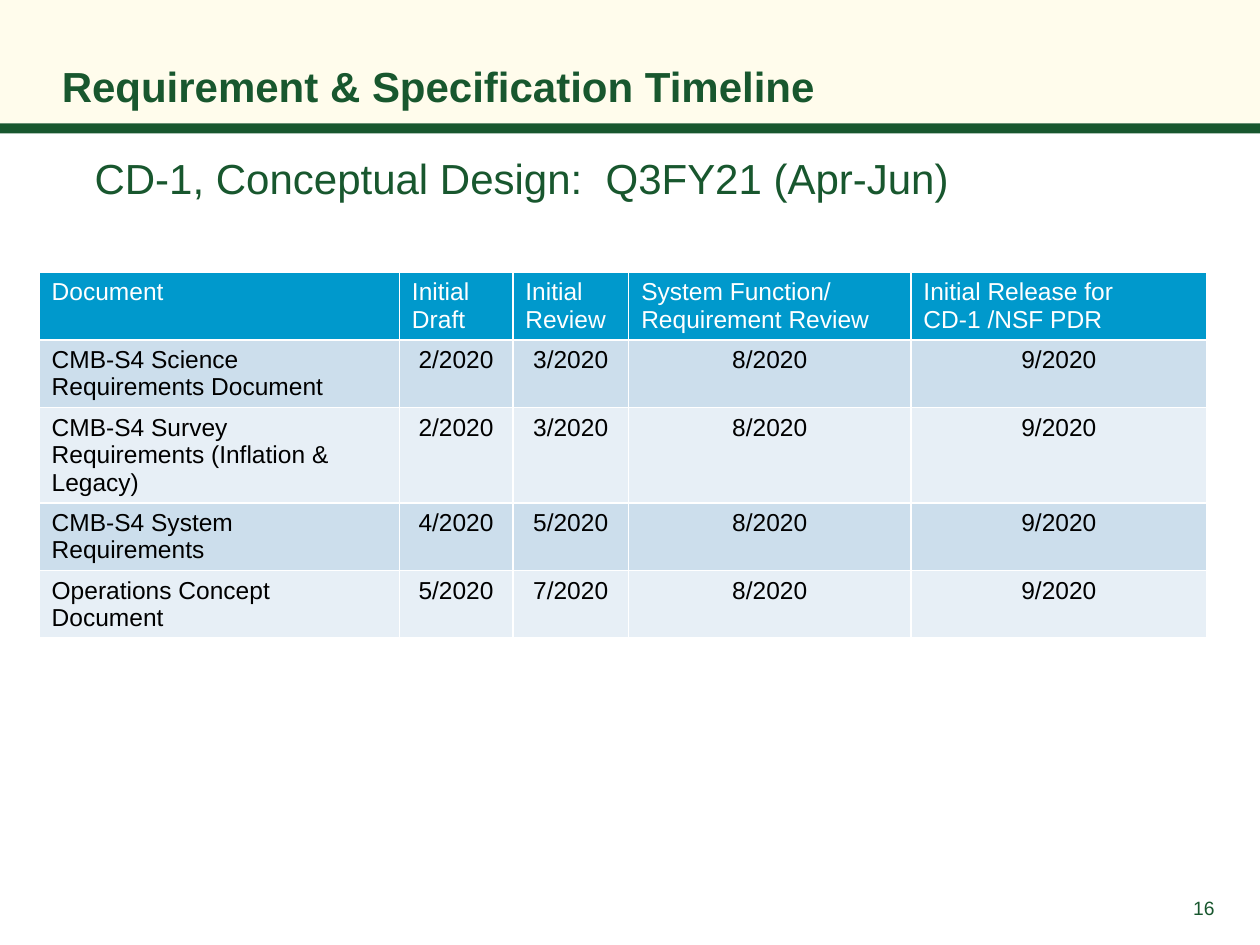
from lxml import etree
from pptx import Presentation, util as u
from pptx.dml.color import RGBColor
from pptx.enum import shapes, text
from pptx.oxml.ns import qn

GREEN, WHITE, BLACK = "18572E", "FFFFFF", "000000"
ALIGN = text.PP_ALIGN


def color(code):
    return RGBColor.from_string(code)


def write(frame, words, size=14, tone=BLACK, bold=False, align=ALIGN.LEFT,
          anchor=text.MSO_ANCHOR.TOP, pads=None):
    """Fill a text frame or cell; pads are left, top, right, bottom in inches."""
    if pads:
        frame.auto_size = text.MSO_AUTO_SIZE.NONE
        frame.word_wrap = True
        sides = ("margin_left", "margin_top", "margin_right", "margin_bottom")
        for side, pad in zip(sides, pads):
            setattr(frame, side, u.Inches(pad))
    frame.vertical_anchor = anchor
    para = getattr(frame, "text_frame", frame).paragraphs[0]
    para.text = words
    para.alignment = align
    for run in para.runs:
        font = run.font
        font.name, font.size, font.bold = "Arial", u.Pt(size), bold
        font.color.rgb = color(tone)
    return para


deck = Presentation()
deck.slide_width, deck.slide_height = u.Inches(10), u.Inches(7.5)
slide = deck.slides.add_slide(deck.slide_layouts[1])
title, body = slide.placeholders

# Header band and rule, placed behind the title
tree = slide.shapes._spTree
bands = [(0, 0.98, "FFFCEC"), (0.98, 0.08, GREEN)]
for spot, (top, high, fill) in enumerate(bands, 2):
    band = slide.shapes.add_shape(shapes.MSO_SHAPE.RECTANGLE, 0, u.Inches(top),
                                  u.Inches(10), u.Inches(high))
    band.shadow.inherit = False
    band.fill.solid()
    band.fill.fore_color.rgb = color(fill)
    band.line.fill.background()
    tree.insert(spot, band._element)

# Title, list and page number
title.left, title.top = u.Inches(0.49), u.Inches(0.06)
title.width, title.height = u.Inches(8.86), u.Inches(0.82)
write(title.text_frame, "Requirement & Specification Timeline", size=24, tone=GREEN,
      bold=True, anchor=text.MSO_ANCHOR.BOTTOM, pads=(0, 0, 0, 0))

body.left, body.top = u.Inches(0.5), u.Inches(1.13)
body.width, body.height = u.Inches(8.87), u.Inches(1.11)
para = write(body.text_frame, "CD-1, Conceptual Design:  Q3FY21 (Apr-Jun)", size=24,
             tone=GREEN, pads=(0, 0, 0, 0))
para.line_spacing = 1.2
para.space_before = u.Pt(0)
props = para._p.get_or_add_pPr()
props.set("marL", str(u.Inches(0.5)))
props.set("indent", str(u.Inches(-0.25)))
etree.SubElement(props, qn("a:buNone"))

page = slide.shapes.add_textbox(u.Inches(9.37), u.Inches(6.91),
                                u.Inches(0.35), u.Inches(0.58))
write(page.text_frame, "16", size=11, tone=GREEN, align=ALIGN.RIGHT,
      anchor=text.MSO_ANCHOR.MIDDLE, pads=(0.08, 0.06, 0.08, 0.05))

# Timeline table
rows = [
    ("Document", "Initial Draft", "Initial Review",
     "System Function/ Requirement Review", "Initial Release for\vCD-1 /NSF PDR"),
    ("CMB-S4 Science Requirements Document", "2/2020", "3/2020", "8/2020", "9/2020"),
    ("CMB-S4 Survey Requirements (Inflation & Legacy)",
     "2/2020", "3/2020", "8/2020", "9/2020"),
    ("CMB-S4 System Requirements", "4/2020", "5/2020", "8/2020", "9/2020"),
    ("Operations Concept Document", "5/2020", "7/2020", "8/2020", "9/2020"),
]
widths = [2.86, 0.9, 0.92, 2.24, 2.35]
heights = [0.49, 0.49, 0.49, 0.49, 0.35]
table = slide.shapes.add_table(len(rows), len(widths), u.Inches(0.31), u.Inches(2.16),
                               u.Inches(sum(widths)), u.Inches(sum(heights))).table
for col, wide in zip(table.columns, widths):
    col.width = u.Inches(wide)
for row, high in zip(table.rows, heights):
    row.height = u.Inches(high)

for r, row in enumerate(rows):
    fill = "0099CC" if r == 0 else ("E7EFF6", "CCDEEC")[r % 2]
    for c, words in enumerate(row):
        cell = table.cell(r, c)
        write(cell, words, tone=BLACK if r else WHITE,
              align=ALIGN.CENTER if r and c else ALIGN.LEFT)
        cell.fill.solid()
        cell.fill.fore_color.rgb = color(fill)
        props = cell._tc.get_or_add_tcPr()
        for spot, side in enumerate(("lnL", "lnR", "lnT", "lnB")):
            line = etree.Element(qn("a:" + side), w=str(u.Pt(1)))
            paint = etree.SubElement(line, qn("a:solidFill"))
            etree.SubElement(paint, qn("a:srgbClr"), val=WHITE)
            props.insert(spot, line)

deck.save("out.pptx")
